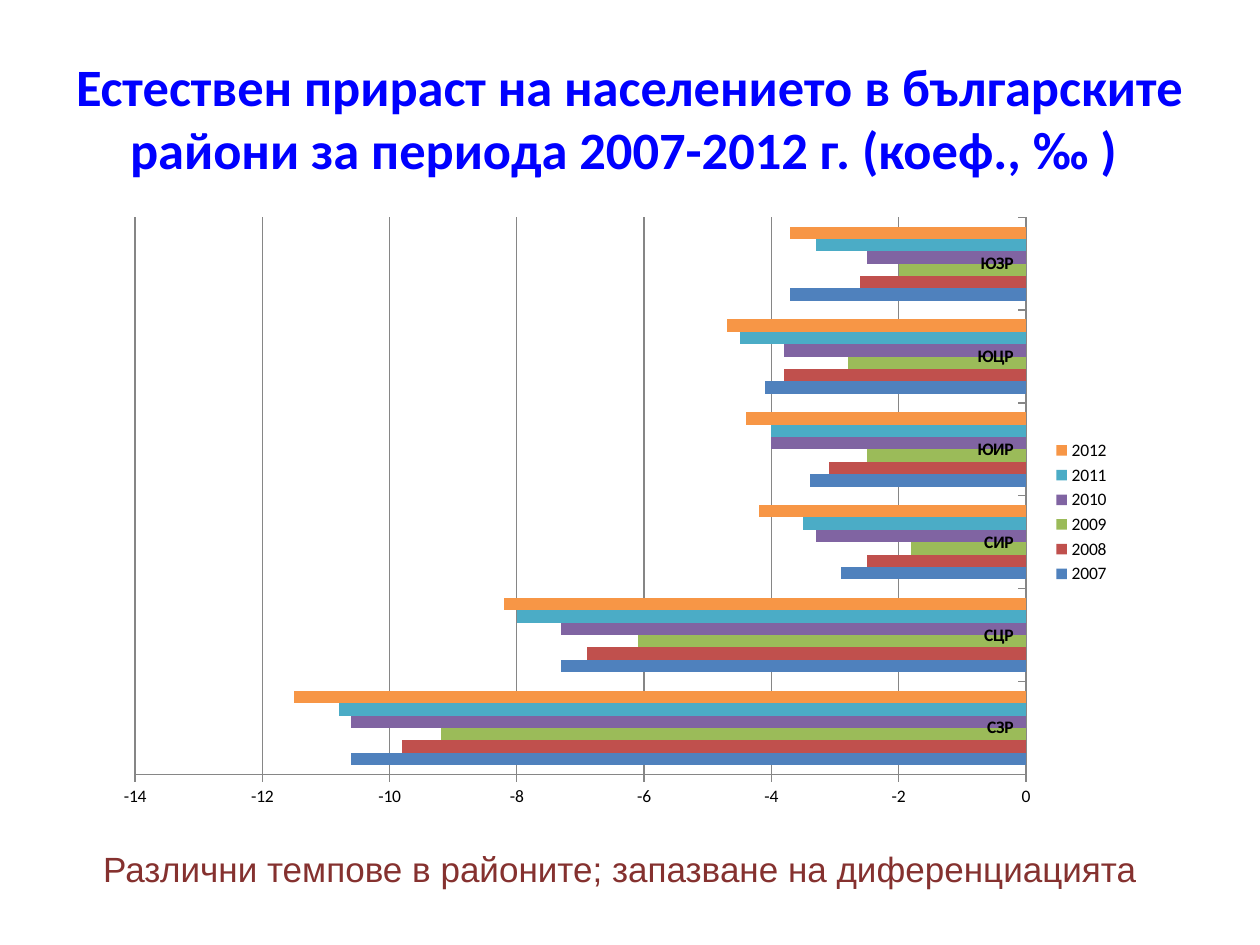
from lxml import etree
from pptx import Presentation
from pptx import util as u
from pptx.chart.data import CategoryChartData
from pptx.dml.color import RGBColor
from pptx.enum import chart as ch
from pptx.enum import text as tx
from pptx.oxml.ns import qn

WIDTH, HEIGHT = u.Inches(10), u.Inches(7.5)
COLORS = {"title": "0000FF", "caption": "85312F", "text": "000000", "axis": "868686"}
RATES = {
    "2007": ("4F81BD", (-10.6, -7.3, -2.9, -3.4, -4.1, -3.7)),
    "2008": ("C0504D", (-9.8, -6.9, -2.5, -3.1, -3.8, -2.6)),
    "2009": ("9BBB59", (-9.2, -6.1, -1.8, -2.5, -2.8, -2)),
    "2010": ("8064A2", (-10.6, -7.3, -3.3, -4, -3.8, -2.5)),
    "2011": ("4BACC6", (-10.8, -8, -3.5, -4, -4.5, -3.3)),
    "2012": ("F79646", (-11.5, -8.2, -4.2, -4.4, -4.7, -3.7)),
}
REGIONS = ("СЗР", "СЦР", "СИР", "ЮИР", "ЮЦР", "ЮЗР")


def share(left, top, width, height):
    return tuple(int(part * side) for part, side in
                 zip((left, top, width, height), (WIDTH, HEIGHT) * 2))


def write(frame, words, font, size, color, bold=False):
    frame.word_wrap = True
    frame.text = words
    line = frame.paragraphs[0]
    line.alignment = tx.PP_ALIGN.CENTER
    style = line.runs[0].font
    style.name, style.size, style.bold = font, u.Pt(size), bold
    style.color.rgb = RGBColor.from_string(color)
    return line


def add_heading(slide, box):
    heading = slide.shapes.title
    heading.left, heading.top, heading.width, heading.height = box
    heading.text_frame.vertical_anchor = tx.MSO_ANCHOR.MIDDLE
    write(heading.text_frame,
          "Естествен прираст на населението в българските райони "
          "за периода 2007-2012 г. (коеф., ‰ ) ",
          "Calibri", 30, COLORS["title"], True)


def add_caption(slide, box):
    caption = slide.shapes.add_textbox(*box)
    line = write(caption.text_frame,
                 "Различни темпове в районите; запазване на диференциацията ",
                 "Arial", 20, COLORS["caption"])
    line.space_before = u.Pt(4)
    indent = u.Inches(0.38)
    props = line._p.get_or_add_pPr()
    props.set("marL", str(indent))
    props.set("indent", str(-indent))


def set_plot_layout(chart, **shares):
    area = chart._chartSpace.chart.plotArea
    for old in area.findall(qn("c:layout")):
        area.remove(old)
    layout = etree.Element(qn("c:layout"))
    area.insert(0, layout)
    manual = etree.SubElement(layout, qn("c:manualLayout"))
    settings = {"layoutTarget": "inner", "xMode": "edge", "yMode": "edge", **shares}
    for key, value in settings.items():
        etree.SubElement(manual, qn(f"c:{key}")).set("val", str(value))


def add_growth_chart(slide, box):
    data = CategoryChartData()
    data.categories = REGIONS
    for year, (_, rates) in RATES.items():
        data.add_series(year, rates)
    growth = slide.shapes.add_chart(ch.XL_CHART_TYPE.BAR_CLUSTERED, *box, data).chart
    growth.has_title = False
    growth.font.name, growth.font.size = "Calibri", u.Pt(10)
    growth.font.color.rgb = RGBColor.from_string(COLORS["text"])

    bars = growth.plots[0]
    bars.gap_width, bars.overlap, bars.vary_by_categories = 150, 0, False
    for series, (color, _) in zip(bars.series, RATES.values()):
        series.invert_if_negative = False
        series.format.fill.solid()
        series.format.fill.fore_color.rgb = RGBColor.from_string(color)

    regions, scale = growth.category_axis, growth.value_axis
    regions.has_major_gridlines, scale.has_major_gridlines = False, True
    scale.minimum_scale, scale.maximum_scale, scale.major_unit = -14, 0, 2
    scale.tick_labels.number_format = "General"
    scale.tick_labels.number_format_is_linked = False
    regions.tick_labels.font.bold = True
    for axis in (regions, scale):
        axis.major_tick_mark = ch.XL_TICK_MARK.OUTSIDE
        axis.minor_tick_mark = ch.XL_TICK_MARK.NONE
    for rule in (regions, scale, scale.major_gridlines):
        rule.format.line.width = u.Pt(0.75)
        rule.format.line.color.rgb = RGBColor.from_string(COLORS["axis"])

    growth.has_legend = True
    growth.legend.position = ch.XL_LEGEND_POSITION.RIGHT
    growth.legend.include_in_layout = False
    set_plot_layout(growth, x=0.03, y=0.02, w=0.875, h=0.907)


def main():
    deck = Presentation()
    deck.slide_width, deck.slide_height = WIDTH, HEIGHT
    slide = deck.slides.add_slide(deck.slide_layouts[5])
    add_heading(slide, share(0.05, 0.04, 0.9, 1 / 6))
    add_caption(slide, share(0.025, 0.89, 0.942, 0.077))
    add_growth_chart(slide, share(0.083, 0.217, 0.808, 0.65))
    deck.save("out.pptx")


if __name__ == "__main__":
    main()
